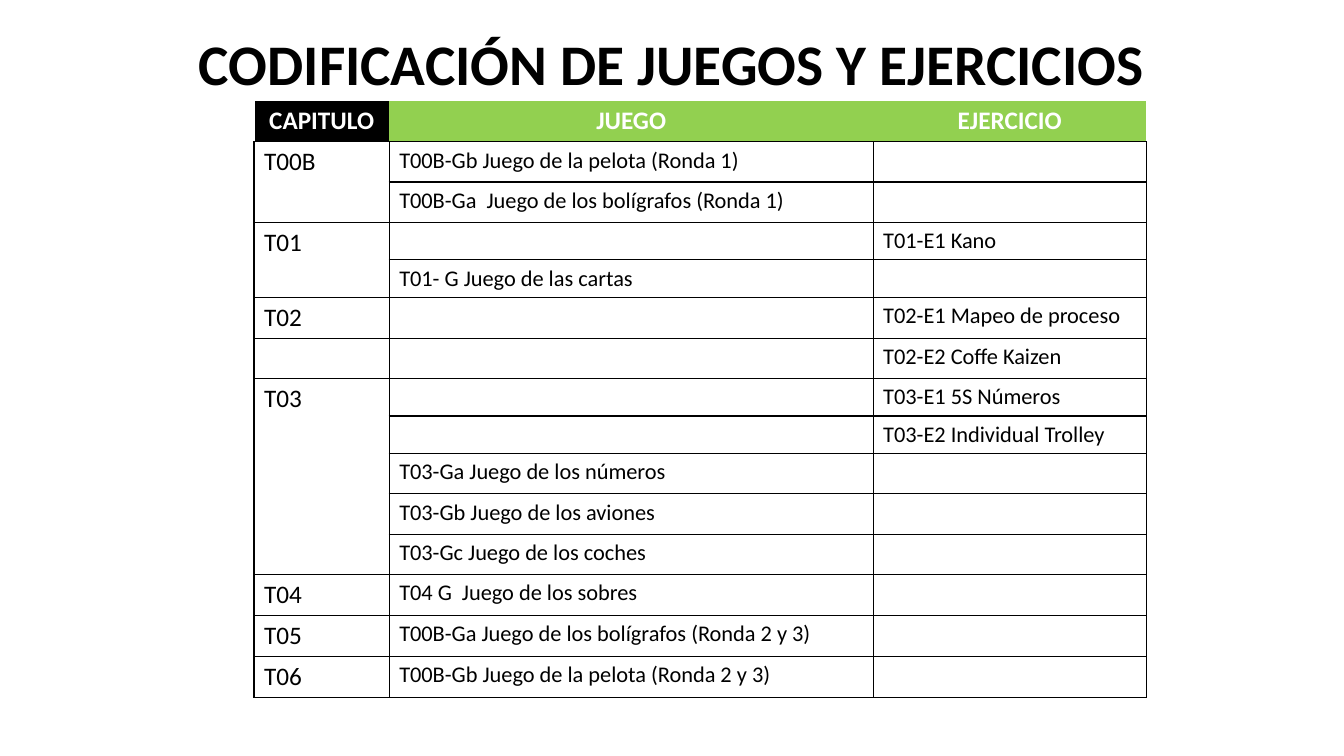
import pptx
import pptx.enum.text
import pptx.oxml
import pptx.util
from lxml import etree
from pptx.dml.color import RGBColor
from pptx.oxml.ns import qn

COLORS = {"black": "000000", "white": "FFFFFF", "green": "92D050"}
FONT = "Calibri"
SLIDE_WIDTH, SLIDE_HEIGHT = 13.33, 7.5
TABLE_LEFT, TABLE_TOP = 2.52, 1
COLUMN_WIDTHS = [1.34, 4.8, 2.71]
ROW_HEIGHT, COMPACT_HEIGHT = 0.4, 0.37
COMPACT_ROWS = {3, 4, 7, 8}
CENTER = pptx.enum.text.PP_ALIGN.CENTER

HEADERS = ["CAPITULO", "JUEGO", "EJERCICIO"]
CHAPTERS = [
    ("T00B", [("T00B-Gb Juego de la pelota (Ronda 1)", ""),
              ("T00B-Ga  Juego de los bolígrafos (Ronda 1)", "")]),
    ("T01", [("", "T01-E1 Kano"),
             ("T01- G Juego de las cartas", "")]),
    ("T02", [("", "T02-E1 Mapeo de proceso")]),
    ("", [("", "T02-E2 Coffe Kaizen")]),
    ("T03", [("", "T03-E1 5S Números"),
             ("", "T03-E2 Individual Trolley"),
             ("T03-Ga Juego de los números", ""),
             ("T03-Gb Juego de los aviones", ""),
             ("T03-Gc Juego de los coches", "")]),
    ("T04", [("T04 G  Juego de los sobres", "")]),
    ("T05", [("T00B-Ga Juego de los bolígrafos (Ronda 2 y 3)", "")]),
    ("T06", [("T00B-Gb Juego de la pelota (Ronda 2 y 3)", "")]),
]


def write_text(paragraph, text, size, color, bold=False):
    """Fill a paragraph; an empty one only gets the size that sets its height."""
    if not text:
        end_mark = etree.SubElement(paragraph._p, qn("a:endParaRPr"))
        end_mark.set("sz", str(size * 100))
        return
    run = paragraph.add_run()
    run.text = text
    font_format = {"name": FONT, "size": pptx.util.Pt(size), "bold": bold}
    for attribute, value in font_format.items():
        setattr(run.font, attribute, value)
    run.font.color.rgb = RGBColor.from_string(COLORS[color])


def style_cell(cell, fill, borders):
    """Set the borders, given as side: colour name or None, and then the fill."""
    properties = cell._tc.get_or_add_tcPr()
    for side in "LRTB":
        line = etree.SubElement(properties, qn(f"a:ln{side}"), w="12700")
        if borders[side]:
            solid = etree.SubElement(line, qn("a:solidFill"))
            etree.SubElement(solid, qn("a:srgbClr"), val=COLORS[borders[side]])
        else:
            etree.SubElement(line, qn("a:noFill"))
    cell.fill.solid()
    cell.fill.fore_color.rgb = RGBColor.from_string(COLORS[fill])


presentation = pptx.Presentation()
presentation.slide_width = pptx.util.Inches(SLIDE_WIDTH)
presentation.slide_height = pptx.util.Inches(SLIDE_HEIGHT)
slide = presentation.slides.add_slide(presentation.slide_layouts[6])

# Table grid
row_count = 1 + sum(len(activities) for _, activities in CHAPTERS)
row_heights = [COMPACT_HEIGHT if row in COMPACT_ROWS else ROW_HEIGHT
               for row in range(row_count)]
table_box = [TABLE_LEFT, TABLE_TOP, sum(COLUMN_WIDTHS), sum(row_heights)]
table = slide.shapes.add_table(
    row_count, len(HEADERS), *map(pptx.util.Inches, table_box)).table
for column, width in zip(table.columns, COLUMN_WIDTHS):
    column.width = pptx.util.Inches(width)
for row, height in zip(table.rows, row_heights):
    row.height = pptx.util.Inches(height)

# Header row
for column, header in enumerate(HEADERS):
    cell = table.cell(0, column)
    paragraph = cell.text_frame.paragraphs[0]
    paragraph.alignment = CENTER
    write_text(paragraph, header, 18, "white", bold=True)
    style_cell(cell, "green" if column else "black", {
        "L": None if column else "white",
        "R": "white" if column == len(HEADERS) - 1 else None,
        "T": "white",
        "B": "black",
    })

# Chapters, each spanning the rows of its games and exercises
row = 1
for chapter, activities in CHAPTERS:
    first_row = row
    for game, exercise in activities:
        code = chapter if row == first_row else ""
        for column, text in enumerate([code, game, exercise]):
            cell = table.cell(row, column)
            size = 18 if text and column == 0 else 16
            write_text(cell.text_frame.paragraphs[0], text, size, "black")
            style_cell(cell, "white", dict.fromkeys("LRTB", "black"))
        row += 1
    if len(activities) > 1:
        table.cell(first_row, 0).merge(table.cell(row - 1, 0))

# Title
title = slide.shapes.add_textbox(
    0, *map(pptx.util.Inches, [0.35, SLIDE_WIDTH, 0.67])).text_frame
title.word_wrap = True
title.vertical_anchor = pptx.enum.text.MSO_ANCHOR.MIDDLE
paragraph = title.paragraphs[0]
paragraph.alignment = CENTER
paragraph.line_spacing = 0.8
write_text(paragraph, "CODIFICACIÓN DE JUEGOS Y EJERCICIOS", 41, "black", bold=True)

presentation.save("out.pptx")
